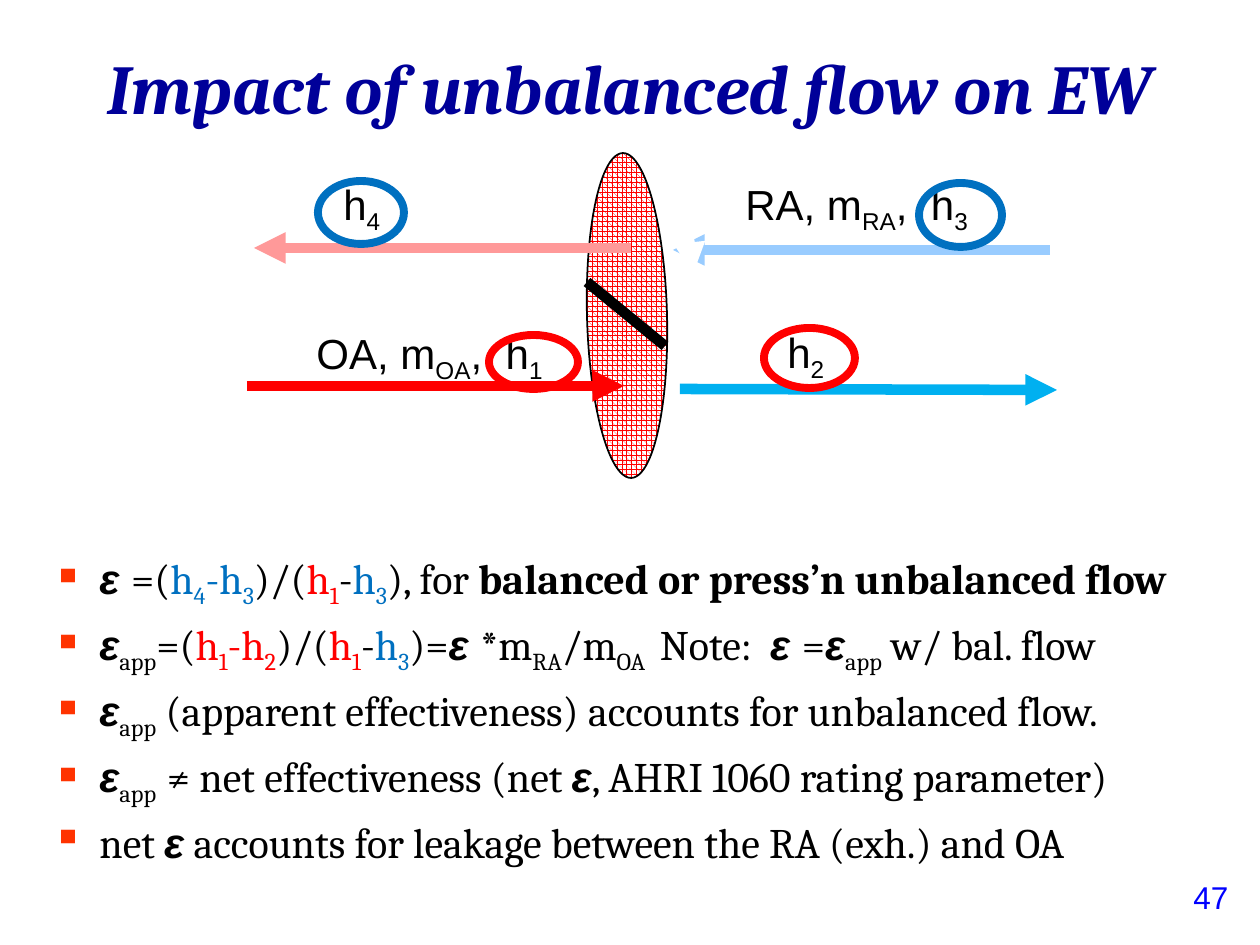
from pptx import Presentation
from pptx.dml.color import RGBColor
from pptx.enum.dml import MSO_PATTERN
from pptx.enum.shapes import MSO_CONNECTOR, MSO_SHAPE
from pptx.enum.text import MSO_ANCHOR, MSO_AUTO_SIZE, PP_ALIGN
from pptx.oxml.ns import qn
from pptx.util import Pt
from lxml.etree import SubElement

SCALE = 914400 / 126
COLORS = {
    "black": "000000", "white": "FFFFFF", "navy": "000099", "page": "0000FF",
    "red": "FF0000", "blue": "0070C0", "bullet": "FF3300",
    "pale_blue": "99CCFF", "sky": "00B0F0", "pink": "FF9999",
}

# Run styles: e = epsilon, s = subscript, r = red, b = blue, B = bold
EPSILON = ("ε", "e")
EPSILON_GAP = ("ε ", "e")
APP = ("app", "s")
H1 = [("h", "r"), ("1", "rs")]
H3 = [("h", "b"), ("3", "bs")]
BULLETS = [
    [EPSILON_GAP, ("=(", ""), ("h", "b"), ("4", "bs"), ("-h", "b"), ("3", "bs"),
     (")/(", ""), *H1, ("-", ""), *H3, ("), for ", ""),
     ("balanced or press’n unbalanced flow", "B")],
    [EPSILON, APP, ("=(", ""), *H1, ("-h", "r"), ("2", "rs"), (")/(", ""), *H1,
     ("-", ""), *H3, (")=", ""), EPSILON_GAP, ("*m", ""), ("RA", "s"), ("/m", ""),
     ("OA ", "s"), (" Note:  ", ""), EPSILON_GAP, ("=", ""), EPSILON, APP,
     (" w/ bal. flow", "")],
    [EPSILON, APP, (" (apparent effectiveness) accounts for unbalanced flow.", "")],
    [EPSILON, ("app  ", "s"), ("≠ net effectiveness (net ", ""), EPSILON,
     (", AHRI 1060 rating parameter)", "")],
    [("net ", ""), EPSILON,
     (" accounts for leakage between the RA (exh.) and OA", "")],
]


def px(value):
    return round(value * SCALE)


def color(name):
    return RGBColor.from_string(COLORS[name])


def format_font(font, name, size, color_name, bold=False, italic=False):
    font.name, font.size = name, Pt(size)
    font.bold, font.italic = bold, italic
    font.color.rgb = color(color_name)


def add_runs(paragraph, pieces, font_name):
    for text, style in pieces:
        run = paragraph.add_run()
        run.text = text
        epsilon = "e" in style
        tint = "red" if "r" in style else "blue" if "b" in style else "black"
        format_font(run.font, "Arial" if epsilon else font_name, 24, tint,
                    epsilon or "B" in style, epsilon)
        if "s" in style:
            run.font._element.set("baseline", "-25000")


def add_text_box(slide, left, top, width, height):
    box = slide.shapes.add_textbox(px(left), px(top), px(width), px(height))
    box.text_frame.word_wrap = True
    return box.text_frame


def format_line(shape, color_name, width, arrow=False):
    shape.line.color.rgb = color(color_name)
    shape.line.width = Pt(width)
    if arrow:
        SubElement(shape.line._get_or_add_ln(), qn("a:tailEnd"), type="triangle")


def add_line(slide, left, top, start, end, color_name, arrow=True):
    points = [px(left + start[0]), px(top + start[1]),
              px(left + end[0]), px(top + end[1])]
    line = slide.shapes.add_connector(MSO_CONNECTOR.STRAIGHT, *points)
    format_line(line, color_name, 6, arrow)
    SubElement(line._element.spPr, qn("a:effectLst"))


def add_ellipse(slide, left, top, width, height):
    ellipse = slide.shapes.add_shape(
        MSO_SHAPE.OVAL, px(left), px(top), px(width), px(height))
    ellipse.shadow.inherit = False
    return ellipse


def add_title(slide, left, top, width, height):
    title = slide.shapes.title
    title.left, title.top = px(left), px(top)
    title.width, title.height = px(width), px(height)
    frame = title.text_frame
    frame.text = "Impact of unbalanced flow on EW"
    frame.auto_size = MSO_AUTO_SIZE.NONE
    frame.vertical_anchor = MSO_ANCHOR.MIDDLE
    paragraph = frame.paragraphs[0]
    paragraph.alignment = PP_ALIGN.CENTER
    format_font(paragraph.runs[0].font, "Cambria", 40, "navy", True, True)


def add_wheel_diagram(slide, left, top):
    # Return air in, supply air out
    add_line(slide, left, top, (803, 103), (426, 103), "pale_blue")
    add_line(slide, left, top, (433, 242), (810, 243), "sky")

    # Energy wheel
    wheel = add_ellipse(slide, left + 340, top + 6, 80, 325)
    wheel.rotation = -1.5
    wheel.fill.patterned()
    wheel.fill.pattern = MSO_PATTERN.SPHERE
    wheel.fill.fore_color.rgb = color("red")
    wheel.fill.back_color.rgb = color("white")
    format_line(wheel, "black", 1)

    # Outdoor air in, wheel divider, exhaust air out
    add_line(slide, left, top, (0, 239), (377, 239), "red")
    add_line(slide, left, top, (340, 135), (418, 199), "black", arrow=False)
    add_line(slide, left, top, (384, 101), (7, 101), "pink")

    # Stream labels
    labels = [
        (57, 174, 273, [("OA, m", ""), ("OA", "s"), (",  h", ""), ("1", "s")]),
        (84, 25, 204, [("h", ""), ("4", "s")]),
        (528, 173, 204, [("h", ""), ("2", "s")]),
        (486, 25, 273, [("RA, m", ""), ("RA", "s"), (",  h", ""), ("3", "s")]),
    ]
    for x, y, width, pieces in labels:
        frame = add_text_box(slide, left + x, top + y, width, 63)
        add_runs(frame.paragraphs[0], pieces, "Arial")

    # White rotation arrow
    bend = [(426, 37), (433, 52), (438, 74), (441, 89), (444, 102), (445, 121), (446, 127)]
    points = [(px(left + x), px(top + y)) for x, y in bend]
    builder = slide.shapes.build_freeform(*points[0])
    builder.add_line_segments(points[1:], close=False)
    curve = builder.convert_to_shape()
    curve.shadow.inherit = False
    curve.fill.background()
    format_line(curve, "white", 6, arrow=True)

    # Rings around the enthalpies
    rings = [(71, 34, 86, 63, "blue"), (672, 36, 83, 64, "blue"),
             (242, 188, 89, 54, "red"), (517, 181, 91, 60, "red")]
    for x, y, width, height, tint in rings:
        ring = add_ellipse(slide, left + x, top + y, width, height)
        ring.fill.background()
        format_line(ring, tint, 4.5)


def add_bullets(slide, left, top, width, height):
    frame = add_text_box(slide, left, top, width, height)
    for index, pieces in enumerate(BULLETS):
        paragraph = frame.add_paragraph() if index else frame.paragraphs[0]
        paragraph.space_before = Pt(5)
        properties = paragraph._p.get_or_add_pPr()
        properties.set("marL", str(px(47)))
        properties.set("indent", str(-px(47)))
        bullet_color = SubElement(properties, qn("a:buClr"))
        SubElement(bullet_color, qn("a:srgbClr"), val=COLORS["bullet"])
        SubElement(properties, qn("a:buChar"), char="▪")
        add_runs(paragraph, pieces, "Cambria")


def add_page_number(slide, left, top, width, height):
    frame = add_text_box(slide, left, top, width, height)
    frame.text = "47"
    format_font(frame.paragraphs[0].runs[0].font, "Arial", 18, "page")


def main():
    presentation = Presentation()
    presentation.slide_width, presentation.slide_height = px(1260), px(945)
    slide = presentation.slides.add_slide(presentation.slide_layouts[5])
    add_page_number(slide, 1181, 872, 79, 50)
    add_title(slide, 0, 38, 1260, 98)
    add_bullets(slide, 40, 546, 1189, 318)
    add_wheel_diagram(slide, 247, 147)
    presentation.save("out.pptx")


if __name__ == "__main__":
    main()
